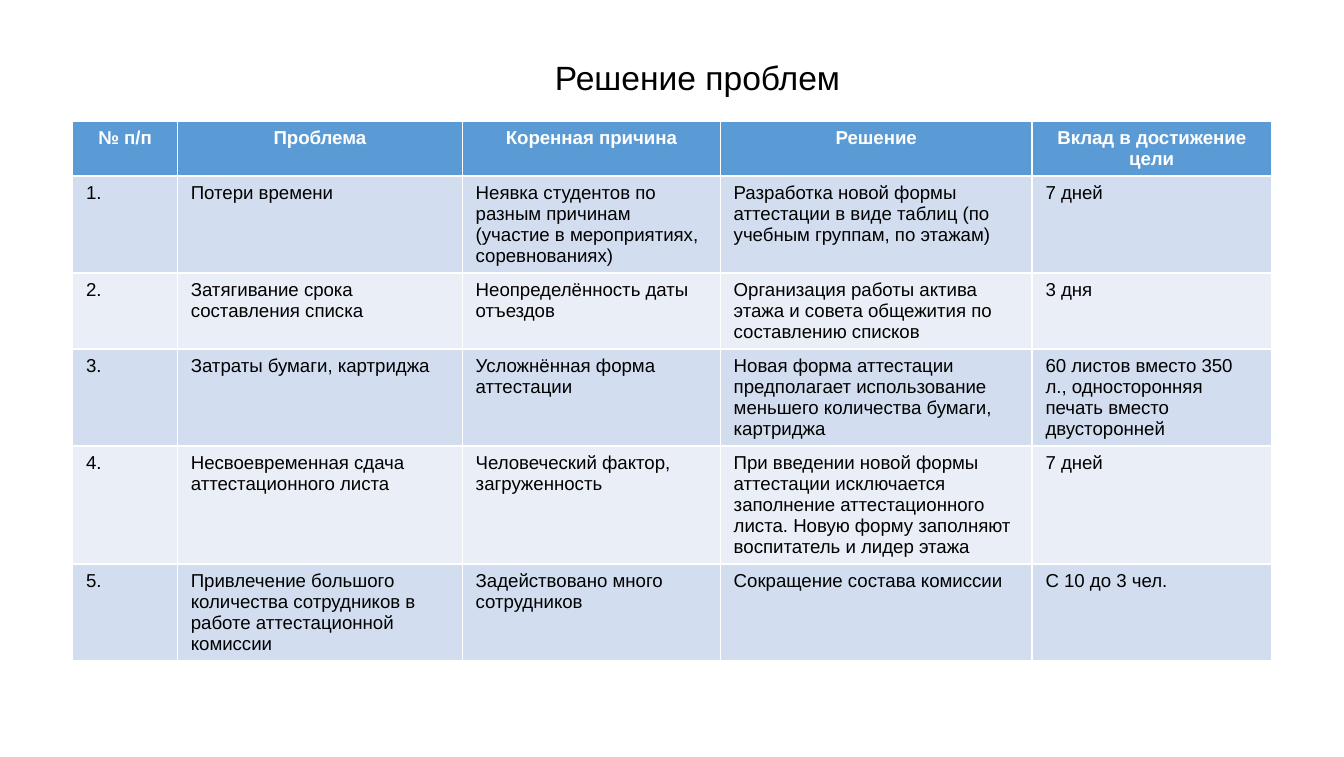
from pptx import Presentation
from pptx import util as u
from pptx.dml import color
from pptx.enum import text

COLORS = {
    "header": "5B9BD5",
    "odd": "D2DEEF",
    "even": "EAEFF7",
    "light": "FFFFFF",
    "dark": "000000",
}
FONT = "Arial"
COLUMN_WIDTHS = [0.78, 2.12, 1.92, 2.32, 1.78]
ROW_HEIGHT = 0.41
HEADINGS = ["№ п/п", "Проблема", "Коренная причина", "Решение", "Вклад в достижение цели"]
PROBLEMS = [
    ("Потери времени",
     "Неявка студентов по разным причинам (участие в мероприятиях, соревнованиях)",
     "Разработка новой формы аттестации в виде таблиц (по учебным группам, по этажам)",
     "7 дней"),
    ("Затягивание срока составления списка",
     "Неопределённость даты отъездов",
     "Организация работы актива этажа и совета общежития по составлению списков",
     "3 дня"),
    ("Затраты бумаги, картриджа",
     "Усложнённая форма аттестации",
     "Новая форма аттестации предполагает использование меньшего количества бумаги, картриджа",
     "60 листов вместо 350 л., односторонняя печать вместо двусторонней"),
    ("Несвоевременная сдача аттестационного листа",
     "Человеческий фактор, загруженность",
     "При введении новой формы аттестации исключается заполнение аттестационного листа. "
     "Новую форму заполняют воспитатель и лидер этажа",
     "7 дней"),
    ("Привлечение большого количества сотрудников в работе аттестационной комиссии",
     "Задействовано много сотрудников",
     "Сокращение состава комиссии",
     "С 10 до 3 чел."),
]


def rgb(name):
    return color.RGBColor.from_string(COLORS[name])


def write(frame, content, size=10, ink="dark", bold=False, align=text.PP_ALIGN.LEFT):
    paragraph = frame.paragraphs[0]
    paragraph.alignment = align
    run = paragraph.add_run()
    run.text = content
    run.font.name = FONT
    run.font.size = u.Pt(size)
    run.font.bold = bold
    run.font.color.rgb = rgb(ink)


def place_title(slide, left, top, width, height):
    title = slide.shapes.title
    title.left, title.top = u.Inches(left), u.Inches(top)
    title.width, title.height = u.Inches(width), u.Inches(height)
    frame = title.text_frame
    frame.word_wrap = True
    frame.auto_size = text.MSO_AUTO_SIZE.NONE
    frame.vertical_anchor = text.MSO_ANCHOR.MIDDLE
    write(frame, "Решение проблем", size=18, align=text.PP_ALIGN.CENTER)


def place_problem_table(slide, left, top, width):
    rows = [HEADINGS] + [(f"{number}.", *problem) for number, problem in enumerate(PROBLEMS, 1)]
    table = slide.shapes.add_table(
        len(rows), len(HEADINGS), u.Inches(left), u.Inches(top),
        u.Inches(width), u.Inches(ROW_HEIGHT * len(rows))).table
    for column, share in zip(table.columns, COLUMN_WIDTHS):
        column.width = u.Inches(width * share / sum(COLUMN_WIDTHS))
    for index, (row, contents) in enumerate(zip(table.rows, rows)):
        row.height = u.Inches(ROW_HEIGHT)
        if index == 0:
            fill = "header"
            style = {"ink": "light", "bold": True, "align": text.PP_ALIGN.CENTER}
        else:
            fill = "odd" if index % 2 else "even"
            style = {}
        for cell, content in zip(row.cells, contents):
            cell.fill.solid()
            cell.fill.fore_color.rgb = rgb(fill)
            write(cell.text_frame, content, **style)


def main():
    deck = Presentation()
    deck.slide_width, deck.slide_height = u.Inches(10), u.Inches(5.63)
    slide = deck.slides.add_slide(deck.slide_layouts.get_by_name("Title Only"))
    place_title(slide, 2.62, 0.37, 5.14, 0.4)
    place_problem_table(slide, 0.54, 0.9, 8.92)
    deck.save("out.pptx")


if __name__ == "__main__":
    main()
